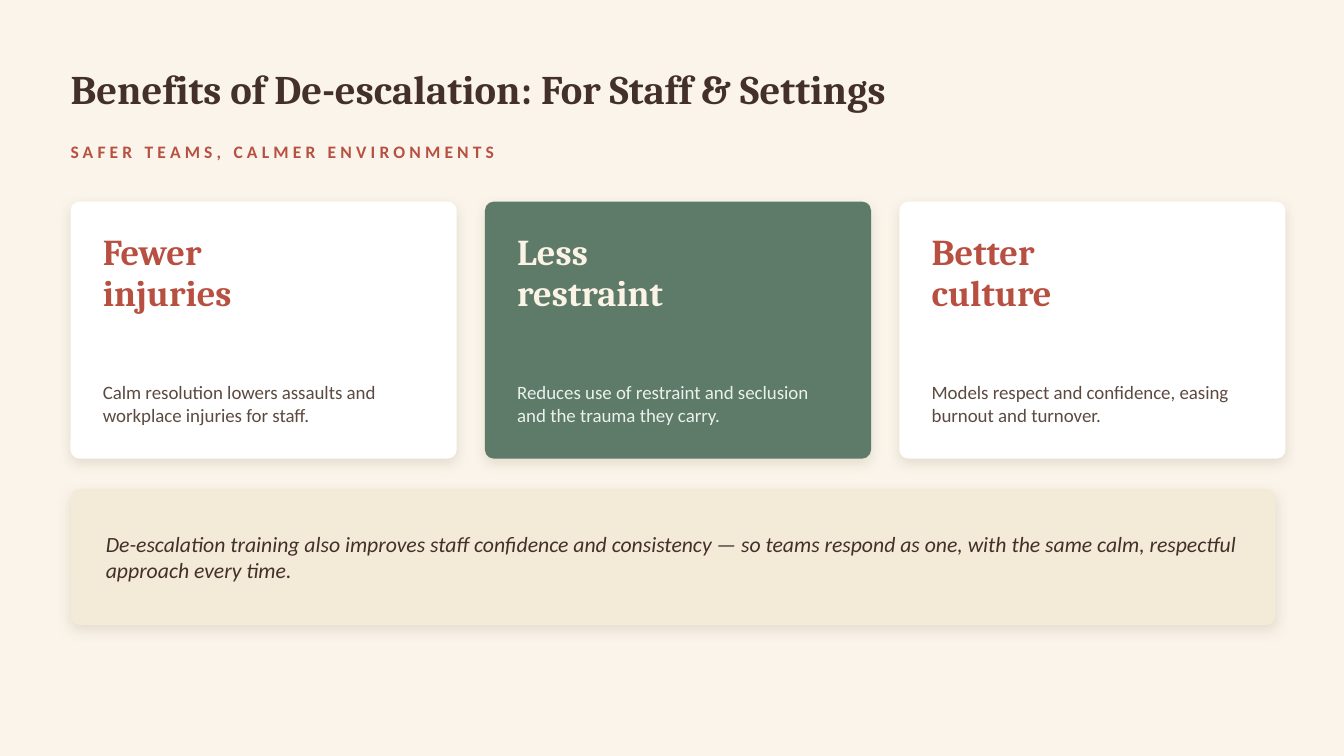
"""Builds the slide on the benefits of de-escalation for staff and settings."""
from dataclasses import dataclass

import lxml.etree
import pptx
import pptx.dml.color
import pptx.enum.shapes
import pptx.enum.text
import pptx.oxml.ns
import pptx.util

Inches = pptx.util.Inches
Anchor = pptx.enum.text.MSO_ANCHOR

COLOURS = {
    "background": "FAF4EA",
    "ink": "43302A",
    "brick": "B85042",
    "brown": "5C4A41",
    "white": "FFFFFF",
    "green": "5E7A68",
    "cream": "FBF3E6",
    "mint": "EAF1EC",
    "sand": "F3EAD8",
    "shadow": "9A8873",
}


@dataclass(frozen=True)
class Area:
    left: float
    top: float
    width: float
    height: float

    def lengths(self) -> tuple:
        return tuple(Inches(n) for n in (self.left, self.top, self.width, self.height))


@dataclass(frozen=True)
class Style:
    font: str
    size: float
    colour: str
    bold: bool = False
    italic: bool = False
    anchor: Anchor = Anchor.MIDDLE
    line_spacing: float = 1.0
    tracking: float = 0


@dataclass(frozen=True)
class Card:
    heading: str
    detail: str
    fill: str = "white"
    heading_colour: str = "brick"
    detail_colour: str = "brown"


CARDS = (
    Card("Fewer\ninjuries",
         "Calm resolution lowers assaults and workplace injuries for staff."),
    Card("Less\nrestraint",
         "Reduces use of restraint and seclusion and the trauma they carry.",
         "green", "cream", "mint"),
    Card("Better\nculture",
         "Models respect and confidence, easing burnout and turnover."),
)
MARGIN = 0.7
CARD_WIDTH = 3.83
CARD_STEP = 4.11
CARD_INSET = 0.32
CLOSING = ("De-escalation training also improves staff confidence and consistency — "
           "so teams respond as one, with the same calm, respectful approach every time.")


def rgb(name: str) -> pptx.dml.color.RGBColor:
    return pptx.dml.color.RGBColor.from_string(COLOURS[name])


def write(box, text: str, style: Style) -> None:
    frame = box.text_frame
    frame.word_wrap = True
    frame.auto_size = pptx.enum.text.MSO_AUTO_SIZE.NONE
    frame.vertical_anchor = style.anchor
    frame.margin_left = frame.margin_right = 0
    frame.margin_top = frame.margin_bottom = 0
    frame.text = text
    for para in frame.paragraphs:
        para.alignment = pptx.enum.text.PP_ALIGN.LEFT
        para.line_spacing = style.line_spacing
        para.font.name = style.font
        para.font.size = pptx.util.Pt(style.size)
        para.font.bold = style.bold
        para.font.italic = style.italic
        para.font.color.rgb = rgb(style.colour)
        if style.tracking:
            for span in para.runs:
                span._r.get_or_add_rPr().set("spc", str(round(style.tracking * 100)))


def add_text(page, area: Area, text: str, style: Style) -> None:
    write(page.shapes.add_textbox(*area.lengths()), text, style)


def add_panel(page, area: Area, fill: str, rounding: float) -> None:
    panel = page.shapes.add_shape(
        pptx.enum.shapes.MSO_SHAPE.ROUNDED_RECTANGLE, *area.lengths())
    panel.adjustments[0] = rounding
    panel.fill.solid()
    panel.fill.fore_color.rgb = rgb(fill)
    panel.line.fill.background()
    panel.shadow.inherit = False
    qn = pptx.oxml.ns.qn
    effects = panel._element.spPr.find(qn("a:effectLst"))
    shadow = lxml.etree.SubElement(
        effects, qn("a:outerShdw"), blurRad=str(pptx.util.Pt(9)),
        dist=str(pptx.util.Pt(3)), dir=str(90 * 60000), algn="bl", rotWithShape="0")
    colour = lxml.etree.SubElement(shadow, qn("a:srgbClr"), val=COLOURS["shadow"])
    lxml.etree.SubElement(colour, qn("a:alpha"), val="22000")


def add_card(page, card: Card, left: float) -> None:
    text_left, text_width = left + CARD_INSET, CARD_WIDTH - 2 * CARD_INSET
    add_panel(page, Area(left, 2, CARD_WIDTH, 2.55), card.fill, 0.035)
    add_text(page, Area(text_left, 2.3, text_width, 1.15), card.heading,
             Style("Cambria", 26, card.heading_colour, bold=True,
                   anchor=Anchor.TOP, line_spacing=0.95))
    add_text(page, Area(text_left, 3.55, text_width, 0.9), card.detail,
             Style("Calibri", 13.5, card.detail_colour))


def main() -> None:
    deck = pptx.Presentation()
    deck.slide_width, deck.slide_height = Inches(13.33), Inches(7.5)
    page = deck.slides.add_slide(deck.slide_layouts.get_by_name("Title Only"))
    page.background.fill.solid()
    page.background.fill.fore_color.rgb = rgb("background")

    title = page.shapes.title
    title.left, title.top, title.width, title.height = Area(
        MARGIN, 0.45, 11.9, 0.85).lengths()
    write(title, "Benefits of De-escalation: For Staff & Settings",
          Style("Cambria", 29, "ink", bold=True))
    add_text(page, Area(MARGIN, 1.35, 11.9, 0.3), "SAFER TEAMS, CALMER ENVIRONMENTS",
             Style("Calibri", 12.5, "brick", bold=True, tracking=3))

    for index, card in enumerate(CARDS):
        add_card(page, card, MARGIN + index * CARD_STEP)

    add_panel(page, Area(MARGIN, 4.85, 11.95, 1.35), "sand", 0.067)
    add_text(page, Area(1.05, 5.05, 11.25, 0.95), CLOSING,
             Style("Calibri", 15.5, "ink", italic=True))
    deck.save("out.pptx")


if __name__ == "__main__":
    main()
